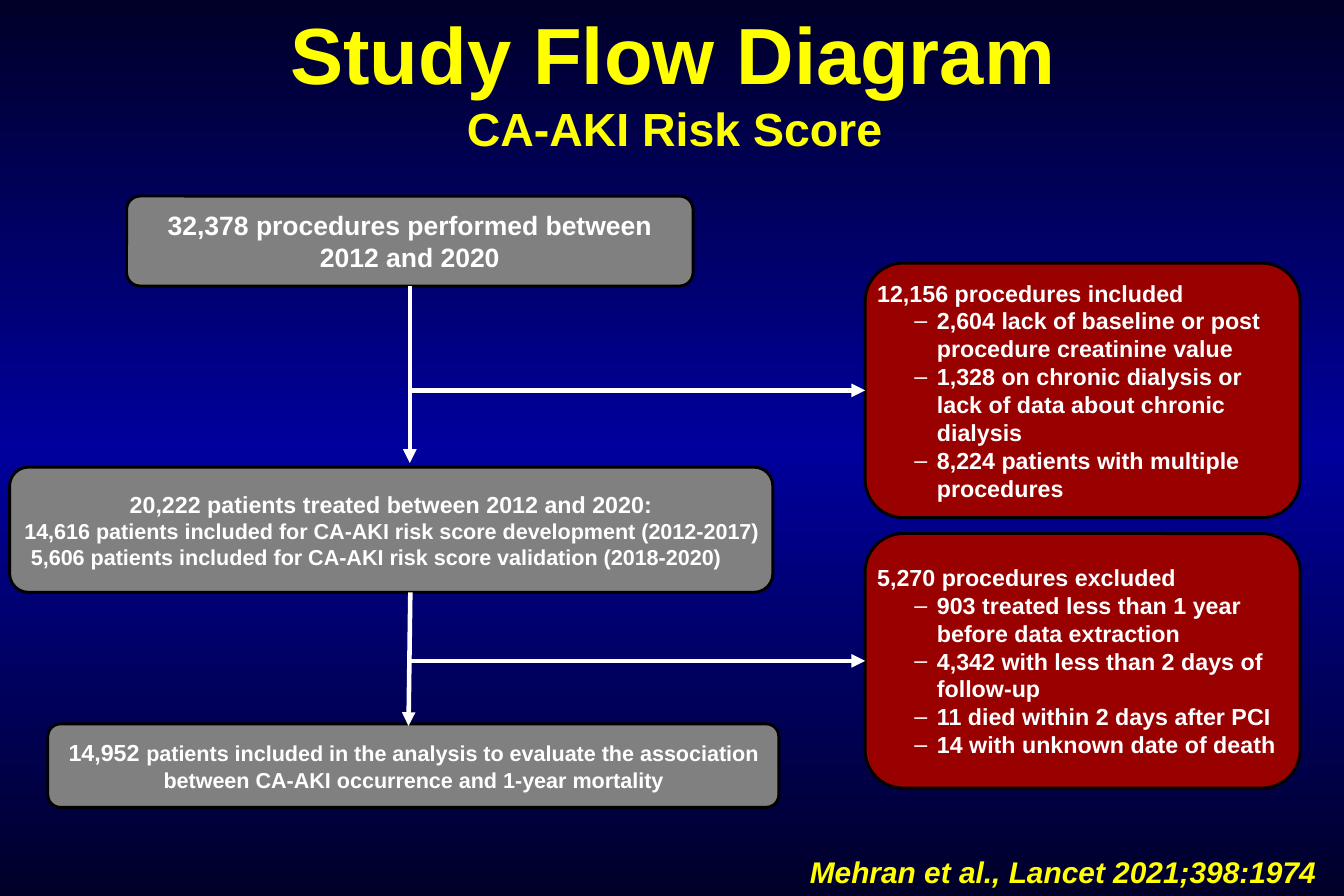
from copy import deepcopy

from lxml import etree
from pptx import Presentation
from pptx.dml.color import RGBColor
from pptx.enum import shapes, text
from pptx.oxml.ns import qn
from pptx.util import Pt

YELLOW = RGBColor(0xFF, 0xFF, 0x00)
WHITE = RGBColor(0xFF, 0xFF, 0xFF)
BLACK = RGBColor(0x00, 0x00, 0x00)
GRAY = RGBColor(0x80, 0x80, 0x80)
RED = RGBColor(0x99, 0x00, 0x00)
NIGHT = RGBColor(0x00, 0x00, 0x28)
BLUE = RGBColor(0x00, 0x00, 0x9C)
FONT = "Arial"
CENTER, LEFT = text.PP_ALIGN.CENTER, text.PP_ALIGN.LEFT

BACKDROP = [(0, NIGHT), (0.5, BLUE), (1, NIGHT)]

# text, frame (left, top, width, height), size, alignment, italic
TITLE = ("Study Flow Diagram", (0.7, 6.5, 810, 67.7), 48, CENTER, False)
SUBTITLE = ("CA-AKI Risk Score", (191.5, 56.9, 430, 41), 28, CENTER, False)
CITATION = ("Mehran et al., Lancet 2021;398:1974", (481, 511, 345.6, 29), 18, LEFT, True)

# Stages: frame, paragraphs of (alignment, left indent, runs of (text, size))
PROCEDURES = ((76.3, 118.2, 341.4, 54.2), [
    (CENTER, 0, [("32,378 procedures performed between 2012 and 2020", 16)]),
])
PATIENTS = ((5.8, 281.5, 460, 75.5), [
    (CENTER, 0, [("20,222 patients treated between 2012 and 2020:", 14)]),
    (CENTER, 0, [("14,616 patients included for CA-AKI risk score development (2012-2017)", 13)]),
    (LEFT, 5.6, [("5,606 patients included for CA-AKI risk score validation (2018-2020)", 13)]),
])
ANALYSIS = ((28.8, 436.3, 440.6, 50.3), [
    (CENTER, 0, [("14,952 ", 14),
                 ("patients included in the analysis to evaluate the association "
                  "between CA-AKI occurrence and 1-year mortality", 13)]),
])

# Exclusions: top, heading, reasons
EXCLUSIONS = [
    (158.6, "12,156 procedures included", [
        "2,604 lack of baseline or post procedure creatinine value",
        "1,328 on chronic dialysis or lack of data about chronic dialysis",
        "8,224 patients with multiple procedures"]),
    (321.6, "5,270 procedures excluded", [
        "903 treated less than 1 year before data extraction",
        "4,342 with less than 2 days of follow-up",
        "11 died within 2 days after PCI",
        "14 with unknown date of death"]),
]
EXCLUSION_LEFT, EXCLUSION_WIDTH, EXCLUSION_HEIGHT = 521.4, 262.2, 153.4

TRUNK_X = 247
CORNER = 0.15
INSET = 7.2


def add_run(paragraph, words, size, color, italic=False):
    run = paragraph.add_run()
    run.text = words
    run.font.name = FONT
    run.font.size = Pt(size)
    run.font.bold = True
    run.font.italic = italic
    run.font.color.rgb = color


def add_label(slide, label):
    words, frame, size, align, italic = label
    body = slide.shapes.add_textbox(*map(Pt, frame)).text_frame
    body.word_wrap = True
    paragraph = body.paragraphs[0]
    paragraph.alignment = align
    add_run(paragraph, words, size, YELLOW, italic)
    return body


def add_box(slide, frame, color):
    """Add a rounded box whose text keeps a constant distance from its sides."""
    box = slide.shapes.add_shape(shapes.MSO_SHAPE.ROUNDED_RECTANGLE, *map(Pt, frame))
    box.adjustments[0] = CORNER
    box.shadow.inherit = False
    box.fill.solid()
    box.fill.fore_color.rgb = color
    box.line.color.rgb = BLACK
    box.line.width = Pt(1.75)
    body = box.text_frame
    body.word_wrap = True
    body.vertical_anchor = text.MSO_ANCHOR.MIDDLE
    # A rounded rectangle already insets its text by 0.29 of the corner radius
    body.margin_left = body.margin_right = Pt(round(INSET - 0.29 * CORNER * frame[3], 2))
    body.margin_top = body.margin_bottom = 0
    return box


def paragraphs_for(body, count):
    return [body.paragraphs[0]] + [body.add_paragraph() for _ in range(count - 1)]


def add_stage(slide, stage):
    frame, lines = stage
    box = add_box(slide, frame, GRAY)
    for paragraph, (align, indent, runs) in zip(paragraphs_for(box.text_frame, len(lines)), lines):
        paragraph.alignment = align
        if indent:
            paragraph._p.get_or_add_pPr().set("marL", str(Pt(indent)))
        for words, size in runs:
            add_run(paragraph, words, size, WHITE)
    return box


def add_dash(paragraph):
    paragraph.level = 1
    props = paragraph._p.get_or_add_pPr()
    props.set("marL", str(Pt(36)))
    props.set("indent", str(Pt(-13.5)))
    color = etree.SubElement(props, qn("a:buClr"))
    etree.SubElement(color, qn("a:srgbClr"), val=str(WHITE))
    etree.SubElement(props, qn("a:buFont"), typeface=FONT)
    etree.SubElement(props, qn("a:buChar"), char="‒")


def add_exclusion(slide, top, heading, reasons):
    box = add_box(slide, (EXCLUSION_LEFT, top, EXCLUSION_WIDTH, EXCLUSION_HEIGHT), RED)
    lines = [heading] + reasons
    for i, paragraph in enumerate(paragraphs_for(box.text_frame, len(lines))):
        if i:
            add_dash(paragraph)
        paragraph.alignment = LEFT
        add_run(paragraph, lines[i], 14, WHITE)
    return box


def add_arrow(slide, start, end):
    arrow = slide.shapes.add_connector(shapes.MSO_CONNECTOR.STRAIGHT, *map(Pt, start + end))
    arrow.line.color.rgb = WHITE
    arrow.line.width = Pt(2.75)
    etree.SubElement(arrow.line._get_or_add_ln(), qn("a:tailEnd"), type="triangle")
    etree.SubElement(arrow._element.spPr, qn("a:effectLst"))
    return arrow


def paint_backdrop(slide):
    fill = slide.background.fill
    fill.gradient()
    fill.gradient_angle = 90
    stops = slide._element.find(".//" + qn("a:gsLst"))
    stops.append(deepcopy(stops[-1]))
    for stop, (position, color) in zip(fill.gradient_stops, BACKDROP):
        stop.position = position
        stop.color.rgb = color


def main():
    deck = Presentation()
    deck.slide_width, deck.slide_height = Pt(810), Pt(540)
    slide = deck.slides.add_slide(deck.slide_layouts[6])
    paint_backdrop(slide)

    title = add_label(slide, TITLE)
    title.vertical_anchor = text.MSO_ANCHOR.MIDDLE
    title.paragraphs[0].line_spacing = Pt(40)
    add_label(slide, SUBTITLE)

    procedures, _, _ = [add_stage(slide, stage) for stage in (PROCEDURES, PATIENTS, ANALYSIS)]
    (_, top, _, height), _ = PROCEDURES
    add_arrow(slide, (TRUNK_X, top + height), (TRUNK_X, 279)).begin_connect(procedures, 2)
    (_, top, _, height), _ = PATIENTS
    add_arrow(slide, (TRUNK_X + 0.3, top + height), (TRUNK_X - 0.8, 437.5))

    for top, heading, reasons in EXCLUSIONS:
        exclusion = add_exclusion(slide, top, heading, reasons)
        middle = top + EXCLUSION_HEIGHT / 2
        branch = add_arrow(slide, (TRUNK_X, middle), (EXCLUSION_LEFT, middle))
        branch.end_connect(exclusion, 1)

    add_label(slide, CITATION)
    deck.save("out.pptx")


if __name__ == "__main__":
    main()
